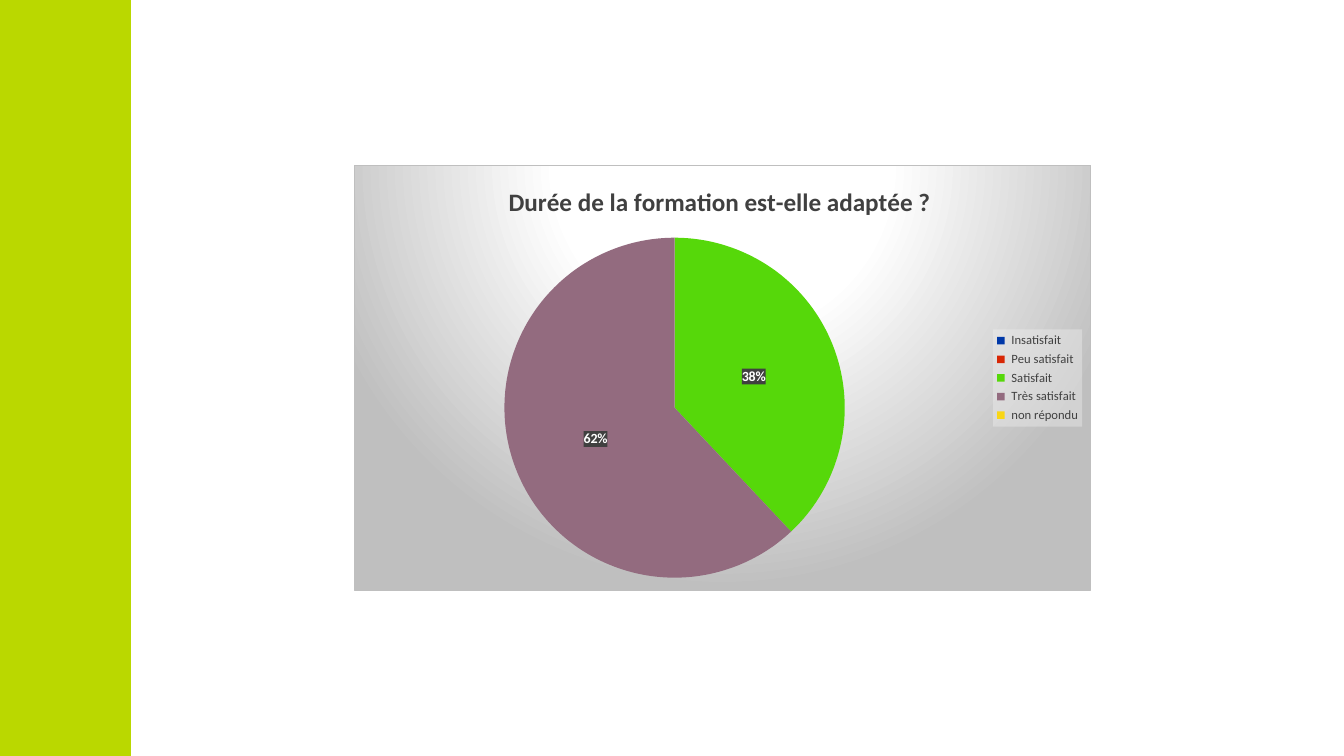
from lxml.etree import SubElement
from pptx import Presentation
from pptx.chart.data import CategoryChartData
from pptx.dml.color import RGBColor
from pptx.enum.chart import XL_CHART_TYPE, XL_LABEL_POSITION, XL_LEGEND_POSITION
from pptx.enum.shapes import MSO_SHAPE
from pptx.oxml import parse_xml
from pptx.oxml.ns import nsdecls, qn
from pptx.util import Emu, Pt


def px(n):
    return Emu(round(n * 914400 / 100.8))


def style(font, size, color, bold=False):
    font.name = "Calibri"
    font.size = Pt(size)
    font.bold = bold
    font.color.rgb = RGBColor.from_string(color)


deck = Presentation()
deck.slide_width, deck.slide_height = px(1344), px(756)
slide = deck.slides.add_slide(deck.slide_layouts[6])

band = slide.shapes.add_shape(MSO_SHAPE.RECTANGLE, px(0), px(0), px(131), px(756))
band.shadow.inherit = False
band.fill.solid()
band.fill.fore_color.rgb = RGBColor.from_string("BAD800")
band.line.fill.background()

name = "Durée de la formation est-elle adaptée ? "
slices = [
    (" Insatisfait", 0, "0038A8"),
    (" Peu satisfait", 0, "D82705"),
    (" Satisfait", 38, "56D80A"),
    (" Très satisfait", 62, "936B7F"),
    (" non répondu", 0, "F9D616"),
]
data = CategoryChartData()
data.categories = [label for label, _, _ in slices]
data.add_series(name, [value for _, value, _ in slices])
chart = slide.shapes.add_chart(
    XL_CHART_TYPE.PIE, px(354), px(165), px(737), px(426), data
).chart
style(chart.font, 10, "000000")

chart.has_title = True
title = chart.chart_title.text_frame
title.text = name
style(title.paragraphs[0].runs[0].font, 18, "404040", True)

chart.has_legend = True
chart.legend.position = XL_LEGEND_POSITION.RIGHT
chart.legend.include_in_layout = False
style(chart.legend.font, 9, "404040")

plot = chart.plots[0]
plot.vary_by_categories = True
series = plot.series[0]
tags = series.data_labels
tags.show_percentage = True
tags.show_value = False
tags.number_format = "0%"
tags.number_format_is_linked = False
tags.position = XL_LABEL_POSITION.CENTER
style(tags.font, 10, "FFFFFF", True)

root = chart.element
labels = root.find(".//" + qn("c:ser")).find(qn("c:dLbls"))
spot = 0
for i, (_, value, color) in enumerate(slices):
    fill = series.points[i].format.fill
    fill.solid()
    fill.fore_color.rgb = RGBColor.from_string(color)
    if value == 0:
        hide = parse_xml(
            f'<c:dLbl {nsdecls("c")}><c:idx val="{i}"/><c:delete val="1"/></c:dLbl>'
        )
        labels.insert(spot, hide)
        spot += 1

solid = '<a:solidFill><a:srgbClr val="{}"><a:alpha val="{}"/></a:srgbClr></a:solidFill>'
glow = (
    '<a:gradFill><a:gsLst><a:gs pos="0"><a:srgbClr val="FFFFFF"/></a:gs>'
    '<a:gs pos="39000"><a:srgbClr val="FFFFFF"/></a:gs>'
    '<a:gs pos="100000"><a:srgbClr val="BFBFBF"/></a:gs></a:gsLst>'
    '<a:path path="circle"><a:fillToRect l="50000" t="-80000" r="50000" b="180000"/>'
    '</a:path></a:gradFill><a:ln w="9525">' + solid.format("BFBFBF", 100000) + "</a:ln>"
)
legend = root.find(".//" + qn("c:legend"))
for part, paint in [
    (root, glow),
    (legend, solid.format("F2F2F2", 39000)),
    (labels, solid.format("404040", 75000)),
]:
    look = parse_xml(f'<c:spPr {nsdecls("c", "a")}>{paint}</c:spPr>')
    part.find(qn("c:txPr")).addprevious(look)

area = root.find(".//" + qn("c:plotArea"))
for old in area.findall(qn("c:layout")):
    area.remove(old)
layout = parse_xml(f'<c:layout {nsdecls("c")}><c:manualLayout/></c:layout>')
for tag, val in [
    ("layoutTarget", "inner"), ("xMode", "edge"), ("yMode", "edge"),
    ("x", 0.2), ("y", 0.17), ("w", 0.47), ("h", 0.8),
]:
    SubElement(layout[0], qn("c:" + tag)).set("val", str(val))
area.insert(0, layout)

deck.save("out.pptx")
